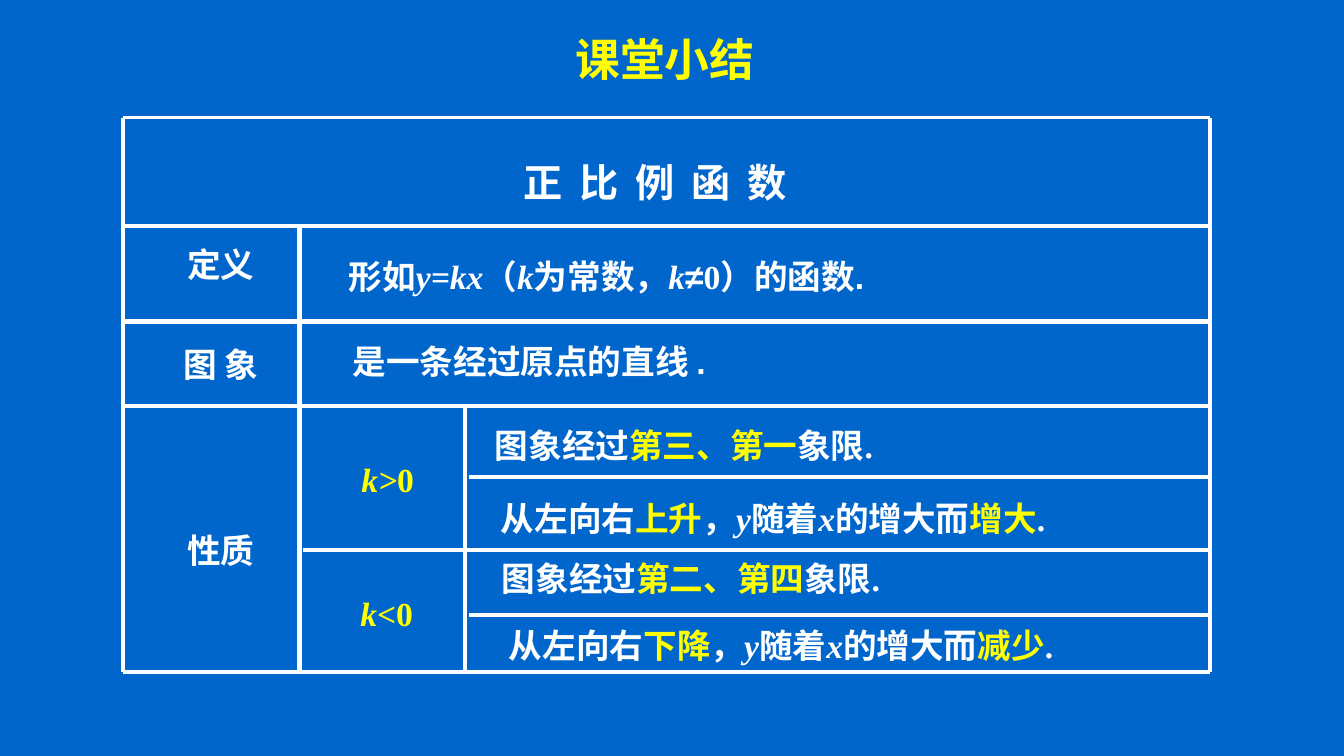
from pptx import Presentation
from pptx import util as u
from pptx.dml.color import RGBColor
from pptx.enum import shapes, text
from pptx.oxml import ns
from lxml import etree

WHITE, YELLOW, BLUE = "FFFFFF", "FFFF00", "0066CC"
FONTS = {"t": "Times New Roman", "a": "Arial", "c": "Comic Neue", "b": "Calibri"}

COLS = [1.22, 2.97, 4.61, 12]
ROWS = [1.17, 2.24, 3.19, 4.03, 4.73, 5.46, 6.1, 6.67]
ACROSS = [(0, 0, 2.25), (1, 0, 3), (2, 0, 3), (3, 0, 3),
          (4, 2, 3), (5, 1, 3), (6, 2, 3), (7, 0, 3)]
DOWN = [(0, 0), (1, 1), (2, 3), (3, 0)]


def trend(move, change):
    return [("从左向右", "t"), (move, "ty"), ("，", "t"), ("y", "ti"),
            ("随着", "t"), ("x", "ti"), ("的增大而", "t"),
            (change, "ty"), (".", "t")]


TITLE = [("课堂小结", "by")]
HEAD = [("正 比 例 函 数", "t")]
LABELS = [
    (1.58, 2.37, 1.22, [("定义", "t")]),
    (1.58, 3.36, 1.22, [("图 象", "t")]),
    (1.58, 5.21, 1.22, [("性质", "t")]),
    (3.01, 4.5, 1.67, [("k>", "tyi"), ("0", "ty")]),
    (2.78, 5.83, 2.11, [("k<", "tyi"), ("0", "ty")]),
]
FACTS = [
    (3.36, 2.49, 7.89, [("形如", "a"), ("y=kx", "ti"), ("（", "a"), ("k", "ti"),
                        ("为常数，", "a"), ("k", "ti"), ("≠", "a"), ("0", "t"),
                        ("）的函数.", "a")]),
    (3.4, 3.33, 7.33, [("是一条经过原点的直线 .", "a")]),
    (4.81, 4.17, 5.78, [("图象经过", "t"), ("第三、第一", "ty"), ("象限.", "t")]),
    (4.87, 4.89, 7.78, trend("上升", "增大")),
    (4.88, 5.49, 5.33, [("图象经过", "c"), ("第二、第四", "cy"), ("象限.", "t")]),
    (4.95, 6.15, 7.44, trend("下降", "减少")),
]


def color(code):
    return RGBColor.from_string(code)


def rule(slide, x1, y1, x2, y2, width=3):
    line = slide.shapes.add_connector(
        shapes.MSO_CONNECTOR.STRAIGHT, *map(u.Inches, (x1, y1, x2, y2)))
    line.line.color.rgb = color(WHITE)
    line.line.width = u.Pt(width)
    etree.SubElement(line._element.spPr, ns.qn("a:effectLst"))


def write(slide, left, top, width, runs, height=0.5, size=24,
          align="LEFT", anchor="TOP", gap=0):
    box = slide.shapes.add_textbox(*map(u.Inches, (left, top, width, height)))
    frame = box.text_frame
    frame.word_wrap = True
    frame.vertical_anchor = text.MSO_ANCHOR[anchor]
    para = frame.paragraphs[0]
    para.alignment = text.PP_ALIGN[align]
    for words, style in runs:
        run = para.add_run()
        run.text = words
        font = run.font
        font.name = FONTS[style[0]]
        font.size = u.Pt(size)
        font.bold = True
        font.italic = "i" in style
        font.color.rgb = color(YELLOW if "y" in style else WHITE)
        if gap:
            run._r.get_or_add_rPr().set("spc", str(gap))


def main():
    deck = Presentation()
    deck.slide_width, deck.slide_height = u.Inches(13.33), u.Inches(7.5)
    slide = deck.slides.add_slide(deck.slide_layouts[6])
    fill = slide.background.fill
    fill.solid()
    fill.fore_color.rgb = color(BLUE)

    for row, col, width in ACROSS:
        inset = 0.04 if col else 0
        rule(slide, COLS[col] + inset, ROWS[row], COLS[-1], ROWS[row], width)
    for col, row in DOWN:
        rule(slide, COLS[col], ROWS[row], COLS[col], ROWS[-1])

    write(slide, 4.29, 0.17, 4.61, TITLE, 0.82, 32, "CENTER", "MIDDLE")
    write(slide, 2.22, 1.52, 8.56, HEAD, 0.57, 28, "CENTER", gap=285)
    for left, top, width, runs in LABELS:
        write(slide, left, top, width, runs, align="CENTER")
    for left, top, width, runs in FACTS:
        write(slide, left, top, width, runs)
    deck.save("out.pptx")


if __name__ == "__main__":
    main()
